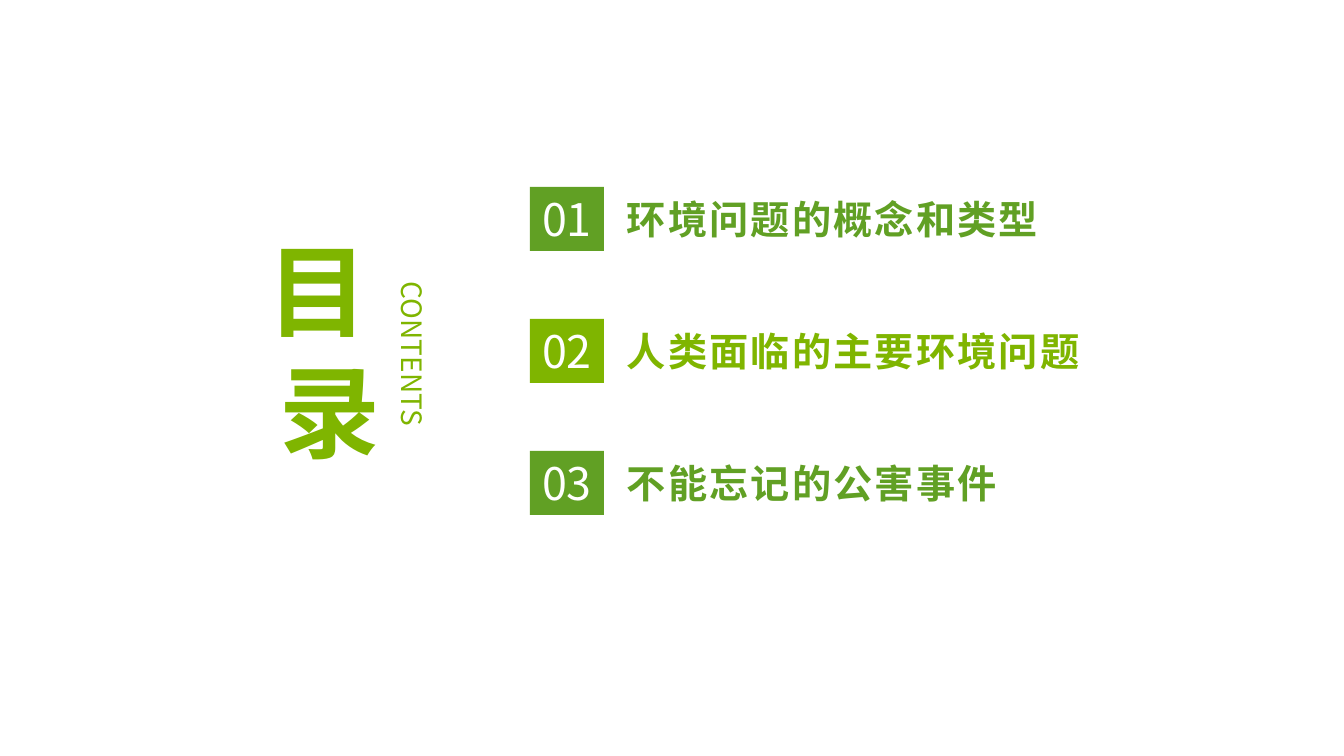
from pptx import Presentation
from pptx import util as u
from pptx.dml import color
from pptx.enum import shapes, text

PX = 914400 / 100.8
FONT = "Noto Sans CJK SC"
GREEN = "61A024"
LIME = "7FB500"


def px(length):
    return u.Emu(round(length * PX))


def write(paragraph, words, size, ink, bold=False, spacing=None):
    run = paragraph.add_run()
    run.text = words
    run.font.size = u.Pt(size)
    run.font.bold = bold
    run.font.color.rgb = color.RGBColor.from_string(ink)
    properties = run._r.get_or_add_rPr()
    if spacing:
        properties.set("spc", str(spacing))
    run.font.name = FONT
    east_asian = properties.makeelement(
        "{http://schemas.openxmlformats.org/drawingml/2006/main}ea", {"typeface": FONT})
    properties.find("{*}latin").addnext(east_asian)


presentation = Presentation()
presentation.slide_width = px(1344)
presentation.slide_height = px(756)
slide = presentation.slides.add_slide(presentation.slide_layouts[5])

title = slide.shapes.title
title.left, title.top, title.width, title.height = px(198), px(224), px(263), px(254)
frame = title.text_frame
frame.auto_size = text.MSO_AUTO_SIZE.NONE
frame.vertical_anchor = text.MSO_ANCHOR.TOP
frame.word_wrap = True
for index, words in enumerate(["目 ", "录"]):
    paragraph = frame.add_paragraph() if index else frame.paragraphs[0]
    paragraph.alignment = text.PP_ALIGN.CENTER
    write(paragraph, words, 72, LIME, bold=True)

contents = slide.shapes.add_textbox(px(380), px(272), px(54), px(162))
contents.text_frame.word_wrap = False
contents.text_frame._txBody.bodyPr.set("vert", "eaVert")
write(contents.text_frame.paragraphs[0], "CONTENTS", 20, LIME)

chapters = [
    ("环境问题的概念和类型", GREEN),
    ("人类面临的主要环境问题", LIME),
    ("不能忘记的公害事件", GREEN),
]
for index, (name, ink) in enumerate(chapters):
    top = 187 + 132 * index
    badge = slide.shapes.add_shape(
        shapes.MSO_SHAPE.RECTANGLE, px(530), px(top), px(74), px(64))
    badge.shadow.inherit = False
    badge.fill.solid()
    badge.fill.fore_color.rgb = color.RGBColor.from_string(ink)
    badge.line.fill.background()
    badge.text_frame.word_wrap = False
    badge.text_frame.vertical_anchor = text.MSO_ANCHOR.MIDDLE
    paragraph = badge.text_frame.paragraphs[0]
    paragraph.alignment = text.PP_ALIGN.CENTER
    write(paragraph, f"{index + 1:02}", 32, "FFFFFF")

    label = slide.shapes.add_textbox(px(617), px(top + 3), px(485), px(57))
    label.text_frame.word_wrap = True
    write(label.text_frame.paragraphs[0], name, 28, ink, bold=True, spacing=160)

presentation.save("out.pptx")
